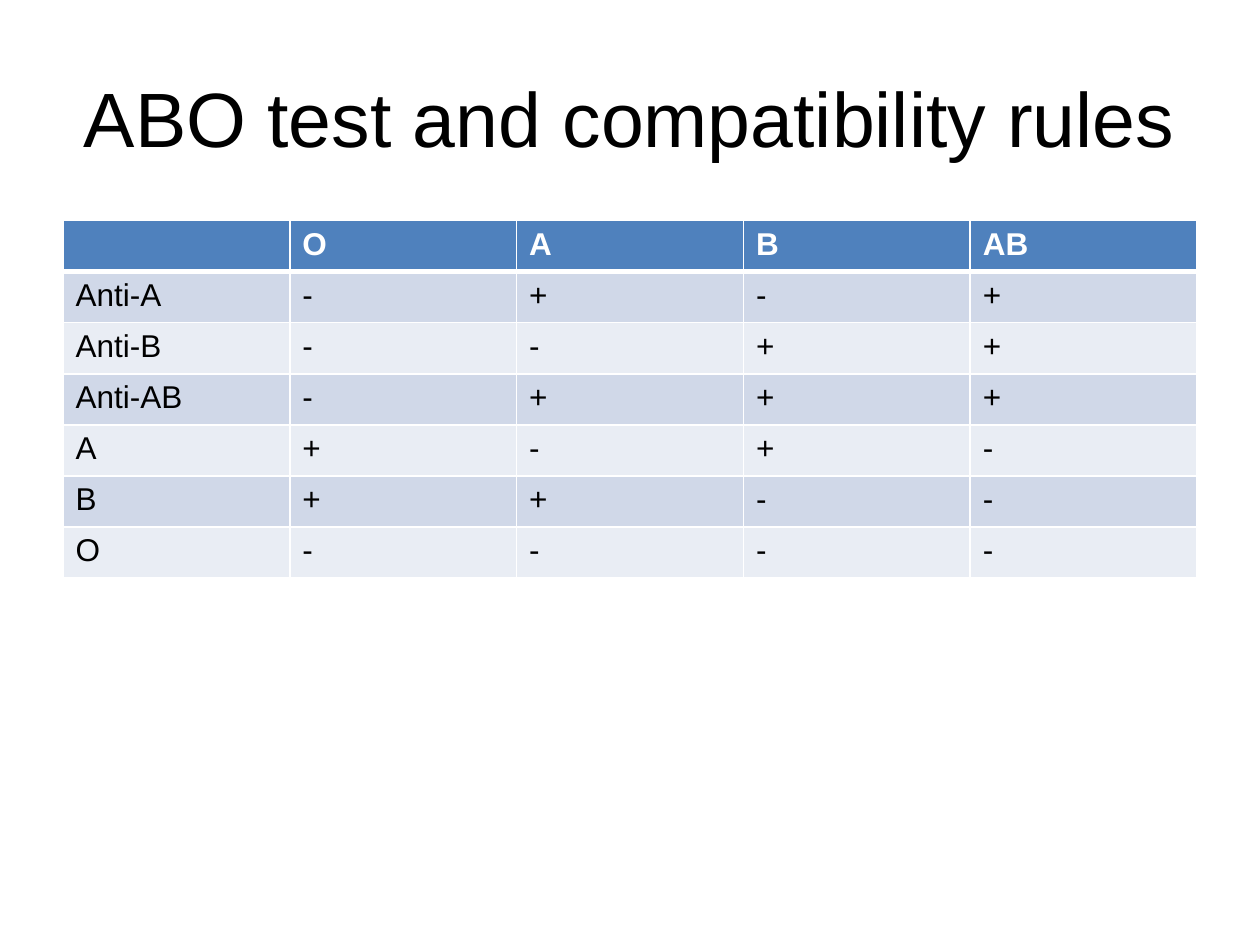
from lxml.etree import SubElement
from pptx import Presentation
from pptx.dml.color import RGBColor
from pptx.enum.text import MSO_ANCHOR, PP_ALIGN
from pptx.oxml.ns import qn
from pptx.util import Inches, Pt

TITLE = "ABO test and compatibility rules"
REACTIONS = [
    ("", "O", "A", "B", "AB"),
    ("Anti-A", "-", "+", "-", "+"),
    ("Anti-B", "-", "-", "+", "+"),
    ("Anti-AB", "-", "+", "+", "+"),
    ("A", "+", "-", "+", "-"),
    ("B", "+", "+", "-", "-"),
    ("O", "-", "-", "-", "-"),
]
COLORS = {
    "text": "000000",
    "header": "4F81BD",
    "header_text": "FFFFFF",
    "odd_row": "D0D8E8",
    "even_row": "E9EDF4",
    "border": "FFFFFF",
}
FONT = "Arial"
LEFT, WIDTH = Inches(0.5), Inches(9)


def rgb(name):
    return RGBColor.from_string(COLORS[name])


def style_font(paragraph, size, color, bold=False):
    for run in paragraph.runs:
        run.font.name = FONT
        run.font.size = Pt(size)
        run.font.bold = bold
        run.font.color.rgb = rgb(color)


def add_borders(cell, widths):
    """Draw cell borders; widths maps L, R, T and B to points."""
    properties = cell._tc.get_or_add_tcPr()
    for side, width in widths.items():
        line = SubElement(properties, qn(f"a:ln{side}"), w=str(Pt(width)))
        fill = SubElement(line, qn("a:solidFill"))
        SubElement(fill, qn("a:srgbClr"), val=COLORS["border"])


def add_title(slide):
    title = slide.shapes.add_textbox(LEFT, Inches(0.3), WIDTH, Inches(1.25))
    frame = title.text_frame
    frame.word_wrap = True
    frame.vertical_anchor = MSO_ANCHOR.MIDDLE
    frame.text = TITLE
    frame.paragraphs[0].alignment = PP_ALIGN.CENTER
    style_font(frame.paragraphs[0], 44, "text")


def add_reactions(slide):
    table = slide.shapes.add_table(
        len(REACTIONS), len(REACTIONS[0]), LEFT, Inches(1.75), WIDTH, Inches(2.84)
    ).table
    for r, reactions in enumerate(REACTIONS):
        is_header = r == 0
        fill = "header" if is_header else "odd_row" if r % 2 else "even_row"
        widths = {"L": 1, "R": 1, "T": 3 if r == 1 else 1, "B": 3 if is_header else 1}
        for c, reaction in enumerate(reactions):
            cell = table.cell(r, c)
            cell.text = reaction
            paragraph = cell.text_frame.paragraphs[0]
            paragraph.font.size = Pt(18)
            style_font(paragraph, 18, "header_text" if is_header else "text", is_header)
            add_borders(cell, widths)
            cell.fill.solid()
            cell.fill.fore_color.rgb = rgb(fill)


def main():
    prs = Presentation()
    prs.slide_width, prs.slide_height = Inches(10), Inches(7.5)
    slide = prs.slides.add_slide(prs.slide_layouts[6])
    add_title(slide)
    add_reactions(slide)
    prs.save("out.pptx")


if __name__ == "__main__":
    main()
